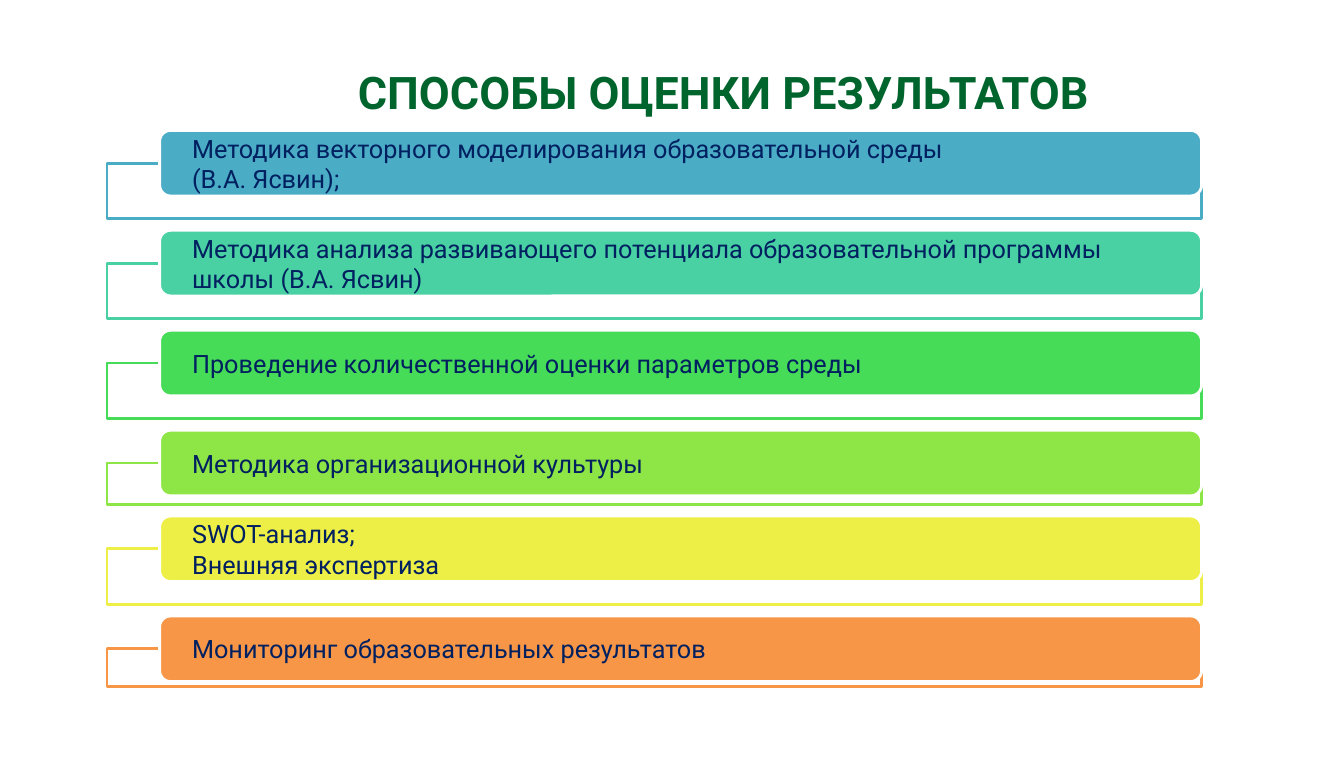
from dataclasses import dataclass

import lxml.etree
import pptx
import pptx.dml.color
import pptx.enum.shapes
import pptx.enum.text
import pptx.oxml.ns
import pptx.util

COLOURS = {
    "title": "00642D",
    "text": "002060",
    "white": "FFFFFF",
    "blue": "4BACC6",
    "teal": "49D1A3",
    "green": "47DC57",
    "lime": "8DE646",
    "yellow": "EEEF46",
    "orange": "F79646",
}
FONT = "Roboto"
FIRST_BAR_TOP = 93
BAR_LEFT, BAR_WIDTH, BAR_HEIGHT = 113.8, 743, 46.8
FRAME_LEFT, FRAME_WIDTH = 76.3, 780.5
GAP = 8.2


@dataclass
class Method:
    lines: list[str]
    colour: str
    frame_height: float = 39.7


METHODS = [
    Method(["Методика векторного моделирования образовательной среды",
            "(В.А. Ясвин);"], "blue"),
    Method(["Методика анализа развивающего потенциала образовательной "
            "программы школы (В.А. Ясвин)"], "teal"),
    Method(["Проведение количественной оценки параметров среды"], "green"),
    Method(["Методика организационной культуры"], "lime", 29.6),
    Method(["SWOT-анализ;", "Внешняя экспертиза"], "yellow"),
    Method(["Мониторинг образовательных результатов"], "orange", 26.7),
]


def rgb(name: str) -> pptx.dml.color.RGBColor:
    return pptx.dml.color.RGBColor.from_string(COLOURS[name])


def write_text(shape, lines: list[str], *, size: float, colour: str,
               bold: bool = False, align=pptx.enum.text.PP_ALIGN.LEFT,
               anchor=pptx.enum.text.MSO_ANCHOR.MIDDLE,
               side_margin: float = 0, line_spacing: float = 1.0) -> None:
    frame = shape.text_frame
    frame.word_wrap = True
    frame.auto_size = pptx.enum.text.MSO_AUTO_SIZE.NONE
    frame.vertical_anchor = anchor
    frame.margin_left = frame.margin_right = pptx.util.Pt(side_margin)
    frame.margin_top = frame.margin_bottom = pptx.util.Pt(0)
    for index, line in enumerate(lines):
        para = frame.paragraphs[0] if index == 0 else frame.add_paragraph()
        para.alignment = align
        para.line_spacing = line_spacing
        para.space_before = para.space_after = pptx.util.Pt(0)
        span = para.add_run()
        span.text = line
        span.font.name = FONT
        span.font.size = pptx.util.Pt(size)
        span.font.bold = bold
        span.font.color.rgb = rgb(colour)


def add_box(page, kind, left: float, top: float, width: float, height: float,
            fill: str, line: str):
    box = page.shapes.add_shape(kind, *map(pptx.util.Pt, (left, top, width, height)))
    box.shadow.inherit = False
    box.fill.solid()
    box.fill.fore_color.rgb = rgb(fill)
    box.line.color.rgb = rgb(line)
    box.line.width = pptx.util.Pt(2)
    return box


def set_opacity(box, percent: int) -> None:
    qn = pptx.oxml.ns.qn
    colour = box._element.spPr.find(qn("a:solidFill")).find(qn("a:srgbClr"))
    lxml.etree.SubElement(colour, qn("a:alpha")).set("val", str(percent * 1000))


def add_title(page) -> None:
    title = page.shapes.title
    title.left, title.top = pptx.util.Pt(73.4), pptx.util.Pt(50.5)
    title.width, title.height = pptx.util.Pt(884.9), pptx.util.Pt(34.6)
    write_text(title, ["СПОСОБЫ ОЦЕНКИ РЕЗУЛЬТАТОВ"], size=32, colour="title",
               bold=True, align=pptx.enum.text.PP_ALIGN.CENTER,
               anchor=pptx.enum.text.MSO_ANCHOR.BOTTOM, line_spacing=0.9)


def add_method(page, method: Method, top: float) -> float:
    """Draw a bar over its outline frame and return the top of the next bar."""
    kinds = pptx.enum.shapes.MSO_SHAPE
    frame_top = top + BAR_HEIGHT / 2
    frame = add_box(page, kinds.RECTANGLE, FRAME_LEFT, frame_top, FRAME_WIDTH,
                    method.frame_height, "white", method.colour)
    set_opacity(frame, 90)
    bar = add_box(page, kinds.ROUNDED_RECTANGLE, BAR_LEFT, top, BAR_WIDTH,
                  BAR_HEIGHT, method.colour, "white")
    write_text(bar, method.lines, size=18, colour="text", side_margin=20.9)
    return frame_top + method.frame_height + GAP


def main() -> None:
    deck = pptx.Presentation()
    deck.slide_width, deck.slide_height = pptx.util.Pt(958.3), pptx.util.Pt(540)
    page = deck.slides.add_slide(deck.slide_layouts.get_by_name("Title Only"))
    add_title(page)
    top = FIRST_BAR_TOP
    for method in METHODS:
        top = add_method(page, method, top)
    deck.save("out.pptx")


if __name__ == "__main__":
    main()
